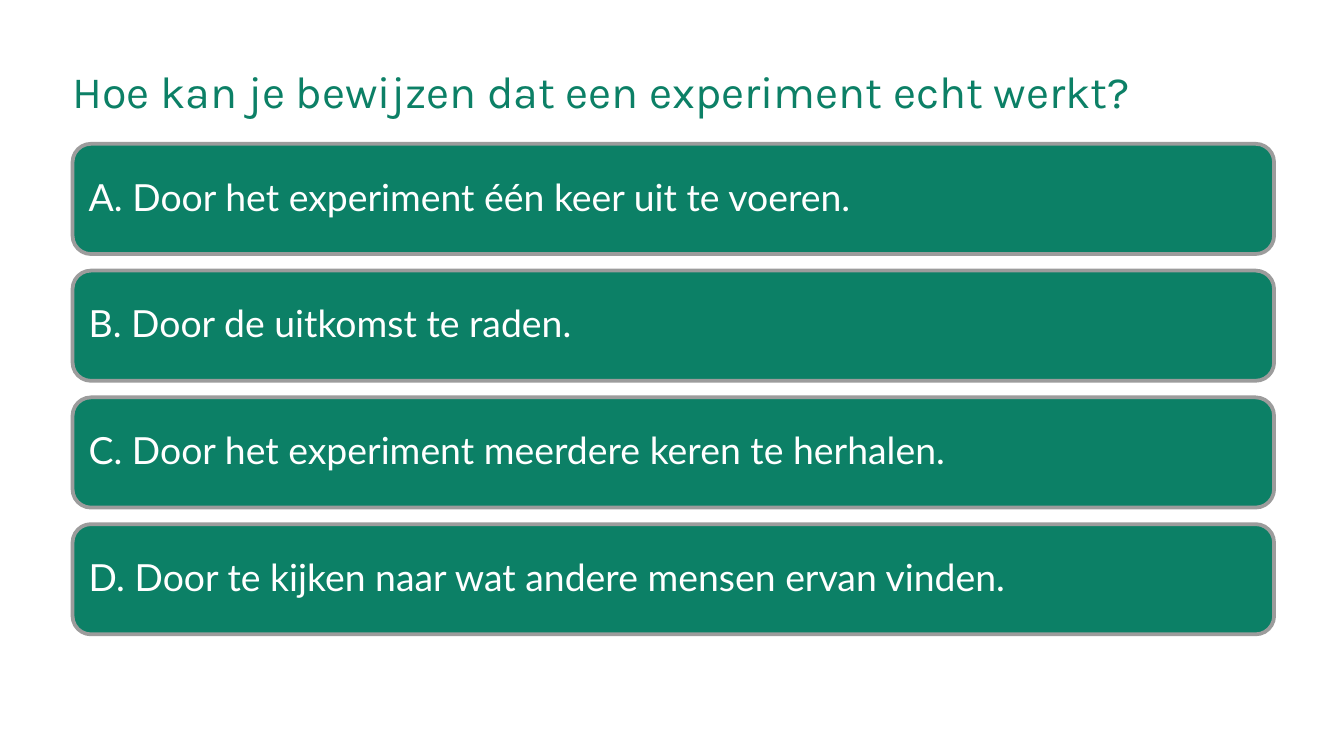
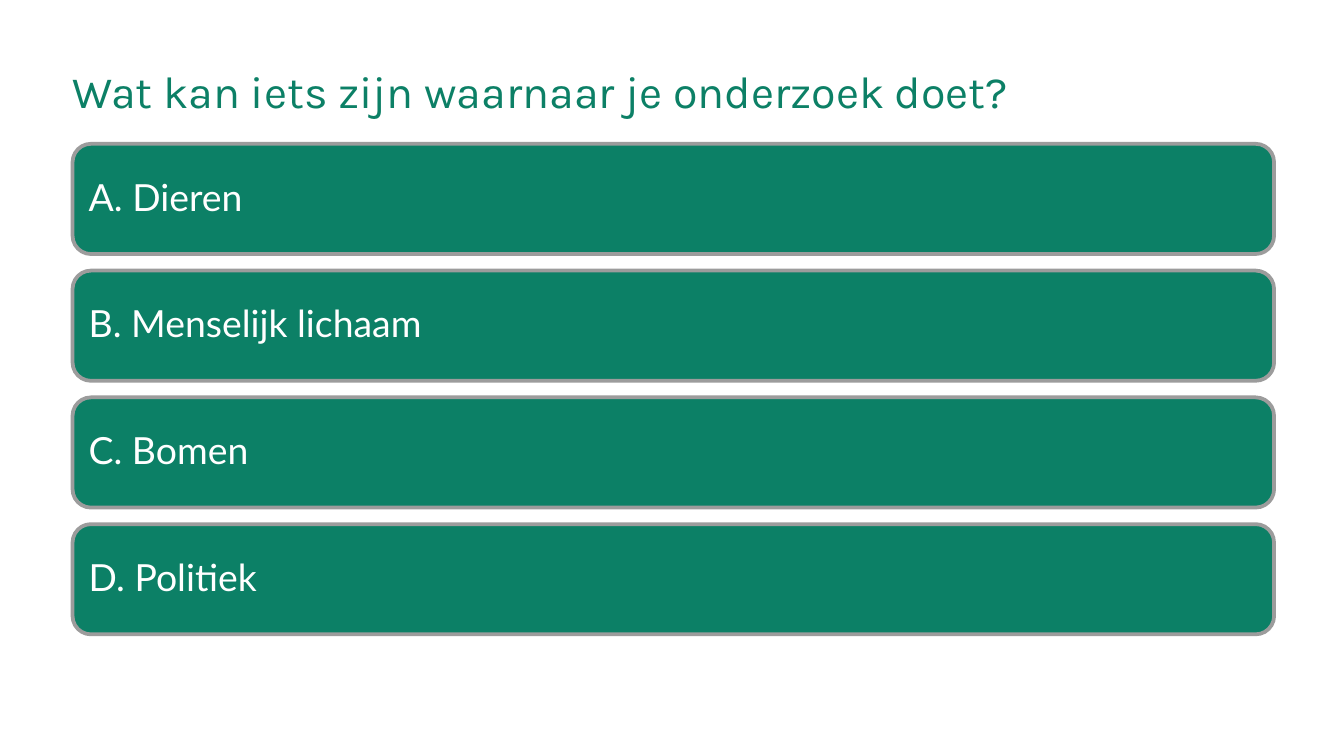
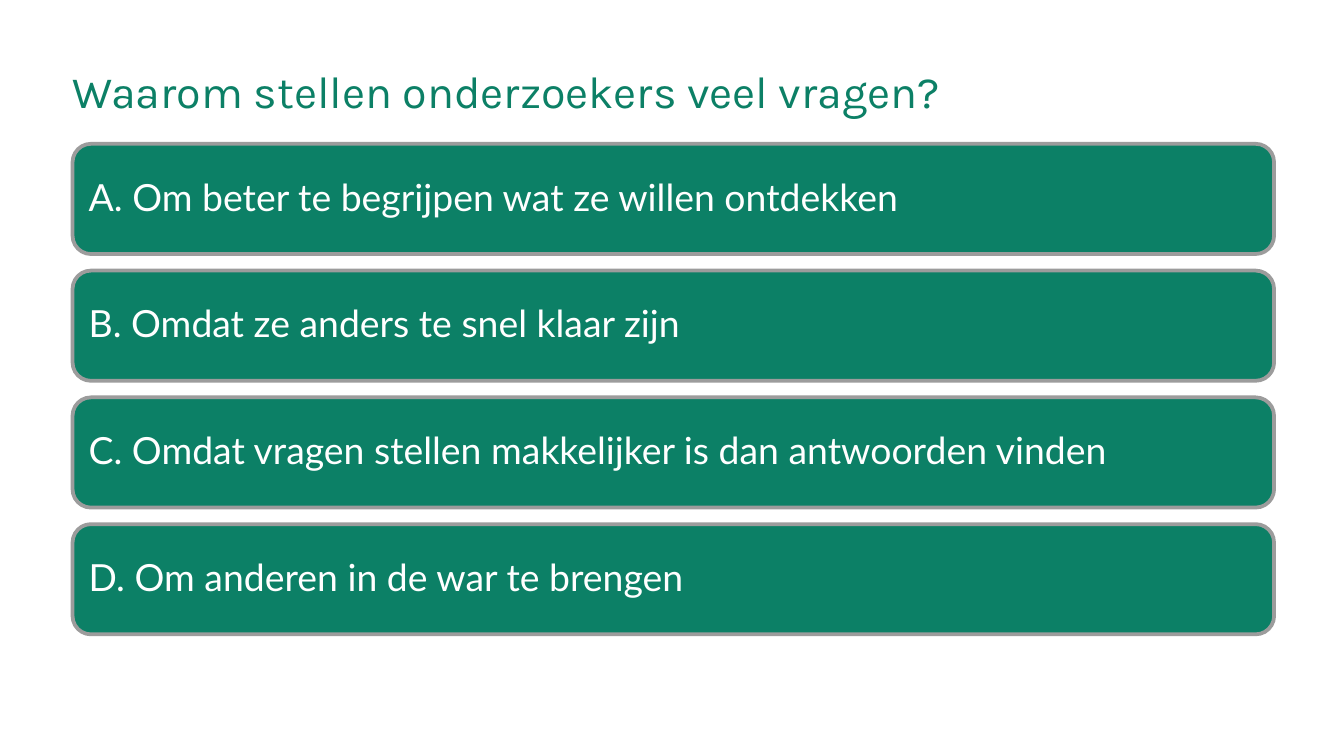
"""Build three multiple-choice slides on doing research."""
from pptx import Presentation
from pptx.dml.color import RGBColor
from pptx.enum.shapes import MSO_SHAPE
from pptx.enum.text import MSO_ANCHOR, MSO_AUTO_SIZE, PP_ALIGN
from pptx.util import Inches, Pt

ROUND = MSO_SHAPE.ROUNDED_RECTANGLE
TOP, MIDDLE = MSO_ANCHOR.TOP, MSO_ANCHOR.MIDDLE
LEFT = PP_ALIGN.LEFT
FIXED = MSO_AUTO_SIZE.NONE

GREEN = RGBColor(0x0C, 0x80, 0x66)
GREY = RGBColor(0x9C, 0x9C, 0x9C)
WHITE = RGBColor(0xFF, 0xFF, 0xFF)

EDGE, WIDTH = 0.54, 8.94
FIRST, LAST, HIGH = 1.07, 3.9, 0.82

QUIZ = [
    ("Hoe kan je bewijzen dat een experiment echt werkt?", [
        "A. Door het experiment één keer uit te voeren.",
        "B. Door de uitkomst te raden.",
        "C. Door het experiment meerdere keren te herhalen.",
        "D. Door te kijken naar wat andere mensen ervan vinden.",
    ]),
    ("Wat kan iets zijn waarnaar je onderzoek doet?", [
        "A. Dieren",
        "B. Menselijk lichaam",
        "C. Bomen",
        "D. Politiek",
    ]),
    ("Waarom stellen onderzoekers veel vragen?", [
        "A. Om beter te begrijpen wat ze willen ontdekken",
        "B. Omdat ze anders te snel klaar zijn",
        "C. Omdat vragen stellen makkelijker is dan antwoorden vinden",
        "D. Om anderen in de war te brengen",
    ]),
]


def write(shape, text, font, size, color, inset, anchor, spacing):
    """Fill a shape with one left-aligned line and return its paragraph."""
    frame = shape.text_frame
    frame.word_wrap = True
    frame.auto_size = FIXED
    frame.vertical_anchor = anchor
    frame.margin_left = frame.margin_right = Inches(inset)
    frame.margin_top = frame.margin_bottom = Inches(inset)
    line = frame.paragraphs[0]
    line.alignment = LEFT
    line.line_spacing = spacing
    run = line.add_run()
    run.text = text
    run.font.name = font
    run.font.size = Pt(size)
    run.font.color.rgb = color
    return line


deck = Presentation()
deck.slide_width, deck.slide_height = Inches(10), Inches(10 * 9 / 16)
layout = deck.slide_layouts.get_by_name("Title Only")

for question, answers in QUIZ:
    slide = deck.slides.add_slide(layout)
    slide.background.fill.solid()
    slide.background.fill.fore_color.rgb = WHITE

    title = slide.shapes.title
    title.left, title.top = Inches(EDGE), Inches(0.43)
    title.width, title.height = Inches(WIDTH), Inches(0.63)
    write(title, question, "Karla", 24, GREEN, 0, TOP, Pt(32))

    step = (LAST - FIRST) / (len(answers) - 1)
    for row, answer in enumerate(answers):
        bar = slide.shapes.add_shape(
            ROUND, Inches(EDGE), Inches(FIRST + row * step),
            Inches(WIDTH), Inches(HIGH))
        bar.shadow.inherit = False
        bar.fill.solid()
        bar.fill.fore_color.rgb = GREEN
        bar.line.color.rgb = GREY
        bar.line.width = Pt(2)
        line = write(bar, answer, "Lato", 20, WHITE, 0.08, MIDDLE, 0.9)
        line.space_after = Pt(7)

deck.save("out.pptx")
